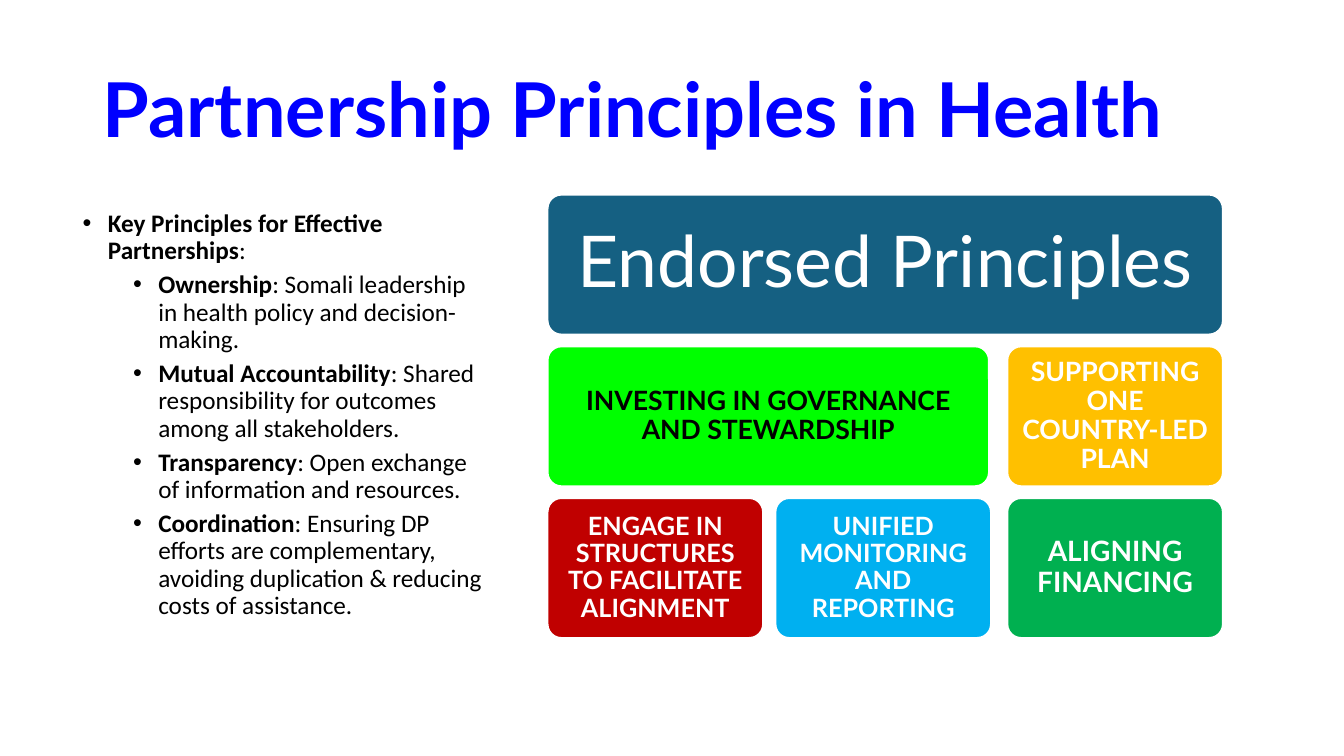
from dataclasses import dataclass

from lxml.etree import SubElement
from pptx import Presentation
from pptx.dml.color import RGBColor
from pptx.enum.shapes import MSO_SHAPE
from pptx.enum.text import MSO_ANCHOR, MSO_AUTO_SIZE, PP_ALIGN
from pptx.oxml.ns import qn
from pptx.util import Inches, Pt


@dataclass(frozen=True)
class Theme:
    """Colours, fonts and type sizes of the slide."""
    heading_font: str = "Lato"
    body_font: str = "Calibri"
    title_size: int = 54
    body_size: int = 18
    banner_size: int = 51
    blue: str = "0000FF"
    black: str = "000000"
    white: str = "FFFFFF"
    teal: str = "156082"
    lime: str = "00FF00"
    amber: str = "FFC000"
    red: str = "C00000"
    sky: str = "00B0F0"
    green: str = "00B050"


THEME = Theme()
LINE_SPACING = 0.9
TILE_HEIGHT, TILE_WIDTH, WIDE_TILE_WIDTH = 1.39, 2.14, 4.38

PRINCIPLES = [
    ("Ownership", ": Somali leadership in health policy and decision-making."),
    ("Mutual Accountability", ": Shared responsibility for outcomes among all stakeholders."),
    ("Transparency", ": Open exchange of information and resources."),
    ("Coordination", ": Ensuring DP efforts are complementary, avoiding duplication "
                     "& reducing costs of assistance."),
]


def style_font(font, name, size, color, bold):
    """Set the typeface, size, colour and weight of a font."""
    font.name, font.size, font.bold = name, Pt(size), bold
    font.color.rgb = RGBColor.from_string(color)


def place(shape, box):
    """Move a shape to a box of left, top, width and height in inches."""
    shape.left, shape.top, shape.width, shape.height = map(Inches, box)


def fill_title(title, box, text):
    """Write the slide title into its placeholder."""
    place(title, box)
    frame = title.text_frame
    frame.text = text
    frame.auto_size = MSO_AUTO_SIZE.NONE
    frame.vertical_anchor = MSO_ANCHOR.MIDDLE
    para = frame.paragraphs[0]
    para.alignment = PP_ALIGN.LEFT
    para.line_spacing = LINE_SPACING
    style_font(para.font, THEME.heading_font, THEME.title_size, THEME.blue, True)


def write_bullet(para, level, lead, rest):
    """Write one bullet with a bold lead and a regular remainder."""
    para.level = level
    para.line_spacing = LINE_SPACING
    para.space_before = Pt(5 if level else 10)
    para.space_after = Pt(0)
    properties = para._p.get_or_add_pPr()
    properties.set("marL", str(Inches(0.25 + 0.5 * level)))
    properties.set("indent", str(Inches(-0.25)))
    SubElement(properties, qn("a:buFont")).set("typeface", "Arial")
    SubElement(properties, qn("a:buChar")).set("char", "•")
    for text, bold in ((lead, True), (rest, False)):
        span = para.add_run()
        span.text = text
        style_font(span.font, THEME.body_font, THEME.body_size, THEME.black, bold)


def fill_principles(body, box):
    """Write the list of key principles into the body placeholder."""
    place(body, box)
    frame = body.text_frame
    frame.auto_size = MSO_AUTO_SIZE.NONE
    write_bullet(frame.paragraphs[0], 0, "Key Principles for Effective Partnerships", ":")
    for lead, rest in PRINCIPLES:
        write_bullet(frame.add_paragraph(), 1, lead, rest)


def add_tile(page, box, text, fill, size, color=THEME.white, bold=True, inset=0.08):
    """Add one rounded tile with centred text."""
    tile = page.shapes.add_shape(MSO_SHAPE.ROUNDED_RECTANGLE, *map(Inches, box))
    tile.adjustments[0] = 0.1
    tile.shadow.inherit = False
    tile.fill.solid()
    tile.fill.fore_color.rgb = RGBColor.from_string(fill)
    tile.line.color.rgb = RGBColor.from_string(THEME.white)
    tile.line.width = Pt(1.5)
    frame = tile.text_frame
    frame.word_wrap = True
    frame.vertical_anchor = MSO_ANCHOR.MIDDLE
    frame.margin_left = frame.margin_right = Inches(inset)
    frame.margin_top = frame.margin_bottom = Inches(inset)
    frame.text = text
    para = frame.paragraphs[0]
    para.alignment = PP_ALIGN.CENTER
    para.line_spacing = LINE_SPACING
    style_font(para.font, THEME.heading_font, size, color, bold)


def add_endorsed_principles(page, box):
    """Build the banner and the two rows of tiles inside the box."""
    left, top, width, height = box
    pitch = (height - TILE_HEIGHT) / 2
    middle, bottom = top + pitch, top + 2 * pitch
    right = left + width - TILE_WIDTH
    add_tile(page, (left, top, width, TILE_HEIGHT), "Endorsed Principles",
             THEME.teal, THEME.banner_size, bold=False, inset=0.21)
    add_tile(page, (left, middle, WIDE_TILE_WIDTH, TILE_HEIGHT),
             "INVESTING IN GOVERNANCE AND STEWARDSHIP", THEME.lime, 19, THEME.black)
    small_tiles = [
        (left, bottom, "ENGAGE IN STRUCTURES TO FACILITATE ALIGNMENT", THEME.red, 18),
        (left + 2.26, bottom, "UNIFIED MONITORING AND REPORTING", THEME.sky, 18),
        (right, middle, "SUPPORTING ONE COUNTRY-LED PLAN", THEME.amber, 19),
        (right, bottom, "ALIGNING FINANCING", THEME.green, 20),
    ]
    for tile_left, tile_top, text, fill, size in small_tiles:
        add_tile(page, (tile_left, tile_top, TILE_WIDTH, TILE_HEIGHT), text, fill, size)


def main():
    """Build the slide and save the deck."""
    deck = Presentation()
    deck.slide_width, deck.slide_height = Inches(13.33), Inches(7.5)
    page = deck.slides.add_slide(deck.slide_layouts[1])
    fill_title(page.shapes.title, (0.92, 0.4, 11.5, 1.45), "Partnership Principles in Health")
    fill_principles(page.placeholders[1], (0.72, 2.04, 4.18, 4.86))
    add_endorsed_principles(page, (5.43, 1.93, 6.7, 4.4))
    deck.save("out.pptx")


if __name__ == "__main__":
    main()
